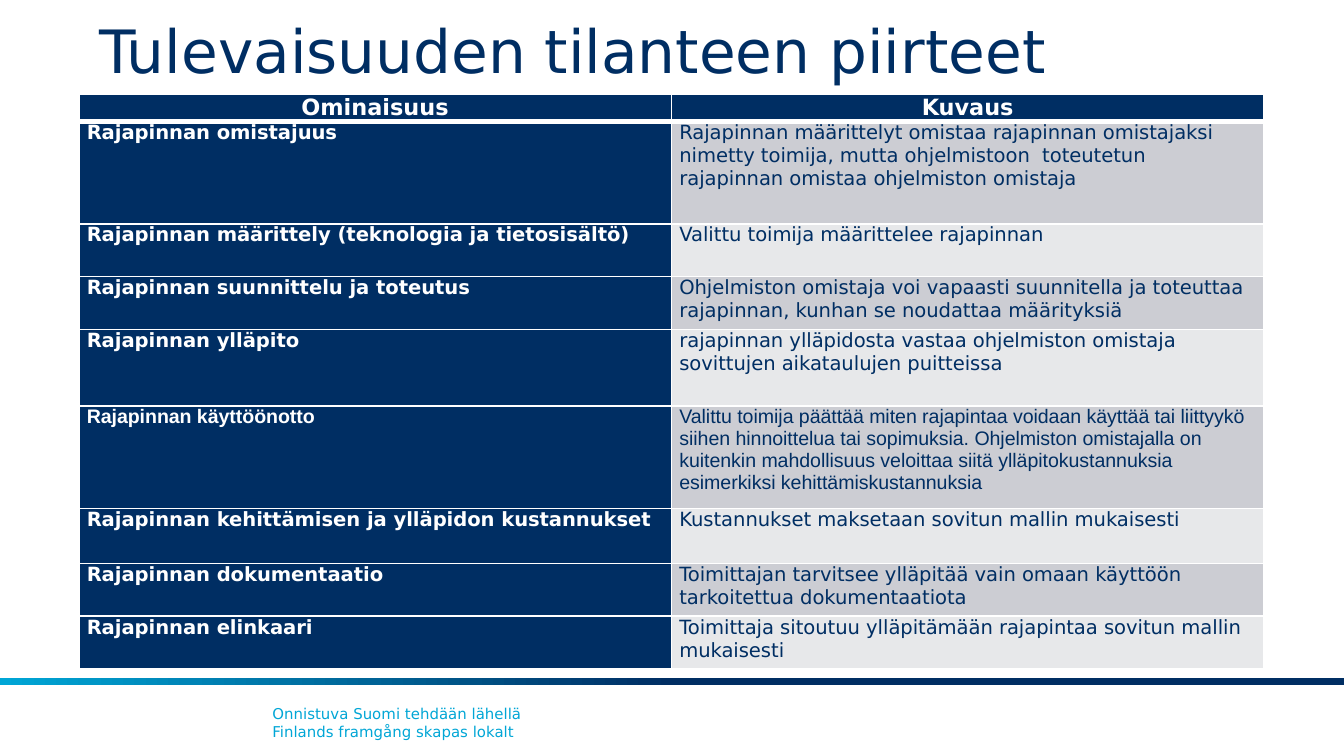
from typing import NamedTuple

from lxml.etree import SubElement
from pptx import Presentation
from pptx.dml.color import RGBColor
from pptx.enum.shapes import MSO_SHAPE
from pptx.enum.text import MSO_ANCHOR, MSO_AUTO_SIZE, PP_ALIGN
from pptx.oxml.ns import qn
from pptx.util import Cm, Pt

NAVY = RGBColor(0x00, 0x2E, 0x63)
CYAN = RGBColor(0x00, 0xA6, 0xD6)
WHITE = RGBColor(0xFF, 0xFF, 0xFF)
BANDS = (RGBColor(0xCC, 0xCD, 0xD3), RGBColor(0xE7, 0xE8, 0xEA))
FONT = "DejaVu Sans"


class Feature(NamedTuple):
    name: str
    description: str
    height: float  # cm
    font: str = FONT


HEADER = Feature("Ominaisuus", "Kuvaus", 0.46)
FEATURES = [
    Feature("Rajapinnan omistajuus",
            "Rajapinnan määrittelyt omistaa rajapinnan omistajaksi nimetty toimija, mutta "
            "ohjelmistoon  toteutetun rajapinnan omistaa ohjelmiston omistaja", 1.93),
    Feature("Rajapinnan määrittely (teknologia ja tietosisältö)",
            "Valittu toimija määrittelee rajapinnan", 1),
    Feature("Rajapinnan suunnittelu ja toteutus",
            "Ohjelmiston omistaja voi vapaasti suunnitella ja toteuttaa rajapinnan, "
            "kunhan se noudattaa määrityksiä", 1),
    Feature("Rajapinnan ylläpito",
            "rajapinnan ylläpidosta vastaa ohjelmiston omistaja sovittujen "
            "aikataulujen puitteissa", 1.45),
    Feature("Rajapinnan käyttöönotto",
            "Valittu toimija päättää miten rajapintaa voidaan käyttää tai liittyykö siihen "
            "hinnoittelua tai sopimuksia. Ohjelmiston omistajalla on kuitenkin mahdollisuus "
            "veloittaa siitä ylläpitokustannuksia esimerkiksi kehittämiskustannuksia",
            1.93, "Arial"),
    Feature("Rajapinnan kehittämisen ja ylläpidon kustannukset",
            "Kustannukset maksetaan sovitun mallin mukaisesti", 1.04),
    Feature("Rajapinnan dokumentaatio",
            "Toimittajan tarvitsee ylläpitää vain omaan käyttöön tarkoitettua "
            "dokumentaatiota", 1),
    Feature("Rajapinnan elinkaari",
            "Toimittaja sitoutuu ylläpitämään rajapintaa sovitun mallin mukaisesti", 1),
]


def add_run(p, text: str, size: float, color: RGBColor,
            bold: bool = False, font: str = FONT) -> None:
    r = p.add_run()
    r.text = text
    r.font.size = Pt(size)
    r.font.name = font
    r.font.bold = bold
    r.font.color.rgb = color


def set_borders(cell, top: float, bottom: float) -> None:
    tc_pr = cell._tc.get_or_add_tcPr()
    for side, width in (("L", 1), ("R", 1), ("T", top), ("B", bottom)):
        ln = SubElement(tc_pr, qn(f"a:ln{side}"), w=str(Pt(width)))
        fill = SubElement(ln, qn("a:solidFill"))
        SubElement(fill, qn("a:srgbClr"), val=str(WHITE))


def fill_cell(cell, text: str, size: float, color: RGBColor, fill: RGBColor,
              bold: bool, font: str, align: PP_ALIGN, top: float, bottom: float) -> None:
    set_borders(cell, top, bottom)
    cell.fill.solid()
    cell.fill.fore_color.rgb = fill
    cell.margin_left = cell.margin_right = Cm(0.15)
    cell.margin_top = cell.margin_bottom = 0
    p = cell.text_frame.paragraphs[0]
    p.alignment = align
    add_run(p, text, size, color, bold, font)


def add_title(slide, text: str) -> None:
    sp = slide.shapes.title
    sp.left, sp.top, sp.width, sp.height = Cm(1.88), Cm(0), Cm(21.62), Cm(1.75)
    tf = sp.text_frame
    tf.auto_size = MSO_AUTO_SIZE.NONE
    tf.vertical_anchor = MSO_ANCHOR.BOTTOM
    tf.margin_left = tf.margin_right = 0
    p = tf.paragraphs[0]
    p.alignment = PP_ALIGN.LEFT
    add_run(p, text, 32, NAVY)


def add_feature_table(slide) -> None:
    rows = [HEADER, *FEATURES]
    height = sum(row.height for row in rows)
    table = slide.shapes.add_table(len(rows), 2, Cm(1.49), Cm(1.79),
                                   Cm(22.4), Cm(height)).table
    table.first_col = True
    for i, row in enumerate(rows):
        table.rows[i].height = Cm(row.height)
        header = i == 0
        top = 3 if i == 1 else 1
        bottom = 3 if header else 1
        size = 12 if header else 10.5
        align = PP_ALIGN.CENTER if header else PP_ALIGN.LEFT
        for j, text in enumerate((row.name, row.description)):
            dark = header or j == 0
            color, fill = (WHITE, NAVY) if dark else (NAVY, BANDS[(i - 1) % 2])
            fill_cell(table.cell(i, j), text, size, color, fill,
                      dark, row.font, align, top, bottom)


def add_footer(slide, width: int) -> None:
    # Gradient rule
    sp = slide.shapes.add_shape(MSO_SHAPE.RECTANGLE, 0, Cm(12.82), width, Cm(0.13))
    sp.shadow.inherit = False
    sp.line.fill.background()
    sp.fill.gradient()
    sp.fill.gradient_angle = 180
    for stop, position, color in zip(sp.fill.gradient_stops, (0.5, 1), (NAVY, CYAN)):
        stop.position = position
        stop.color.rgb = color

    # Slogan in two languages
    tf = slide.shapes.add_textbox(Cm(4.9), Cm(13.2), Cm(16.6), Cm(0.94)).text_frame
    tf.word_wrap = True
    p = tf.paragraphs[0]
    add_run(p, "Onnistuva Suomi tehdään lähellä", 8, CYAN)
    p.add_line_break()
    add_run(p, "Finlands framgång skapas lokalt", 8, CYAN)


def main() -> None:
    prs = Presentation()
    prs.slide_width, prs.slide_height = Cm(25.4), Cm(14.29)
    slide = prs.slides.add_slide(prs.slide_layouts[5])
    add_footer(slide, prs.slide_width)
    add_title(slide, "Tulevaisuuden tilanteen piirteet")
    add_feature_table(slide)
    prs.save("out.pptx")


if __name__ == "__main__":
    main()
